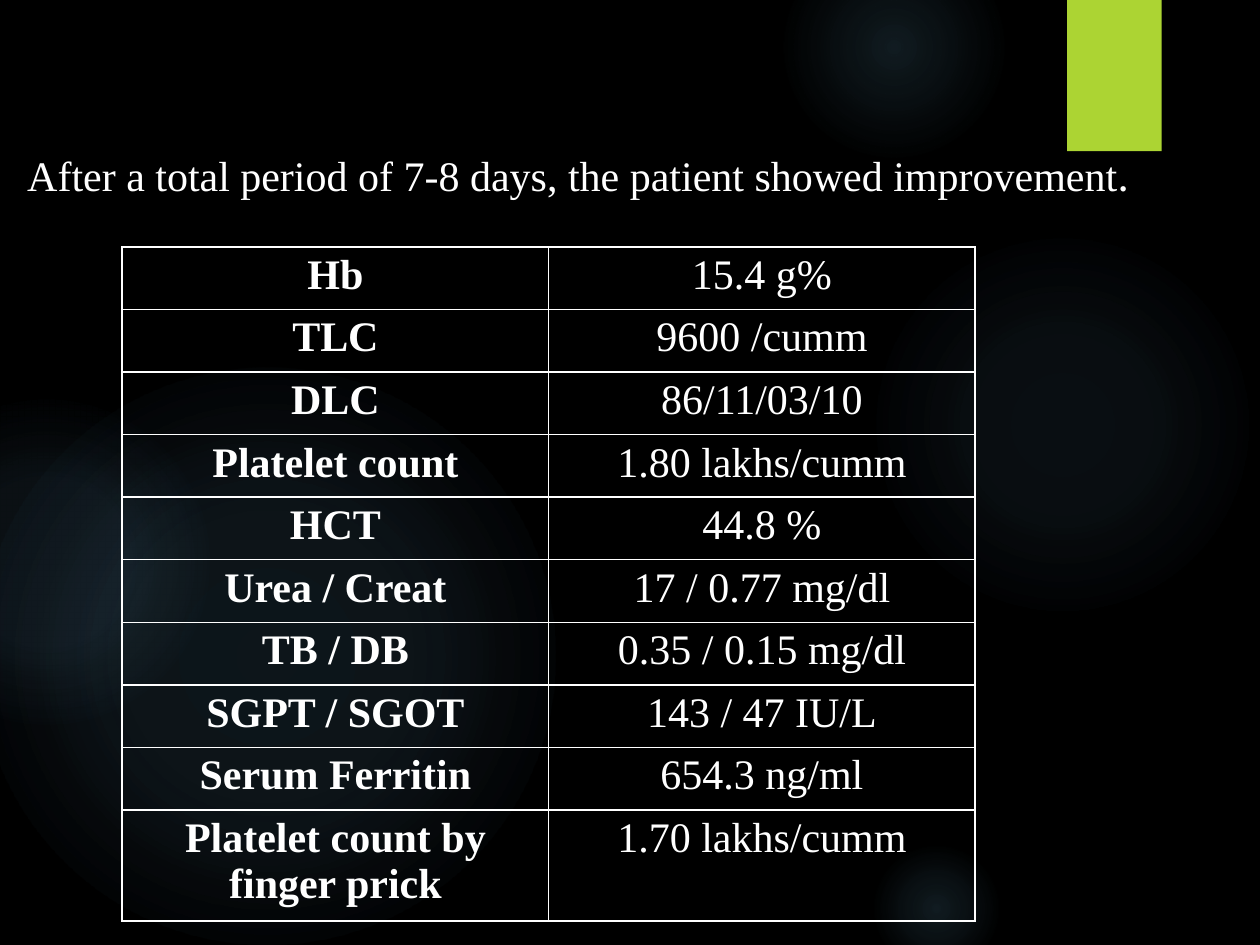
from dataclasses import dataclass

from lxml.etree import SubElement
from pptx import Presentation
from pptx.dml.color import RGBColor
from pptx.enum.shapes import MSO_SHAPE
from pptx.enum.text import PP_ALIGN
from pptx.oxml import parse_xml
from pptx.oxml.ns import nsdecls, qn
from pptx.util import Inches, Pt


@dataclass(frozen=True)
class Theme:
    background: str = "000000"
    text: str = "FFFFFF"
    glow: str = "7AC4F0"
    accent: str = "ACD433"
    font: str = "Times New Roman"
    stop_font: str = "League Spartan"
    size: int = 24
    border: int = 1


theme = Theme()


def style(p, bold):
    p.alignment = PP_ALIGN.CENTER
    p.font.name = theme.font
    p.font.size = Pt(theme.size)
    p.font.bold = bold
    p.font.color.rgb = RGBColor.from_string(theme.text)


def glow_fill(stops):
    gs = "".join(
        f'<a:gs pos="{pos * 1000}"><a:srgbClr val="{theme.glow}">'
        f'<a:alpha val="{alpha * 1000}"/></a:srgbClr></a:gs>'
        for pos, alpha in stops
    )
    return parse_xml(
        f'<a:gradFill {nsdecls("a")} rotWithShape="1"><a:gsLst>{gs}</a:gsLst>'
        '<a:path path="circle"><a:fillToRect l="50000" t="50000" r="50000" b="50000"/>'
        "</a:path></a:gradFill>"
    )


prs = Presentation()
prs.slide_width, prs.slide_height = Inches(10), Inches(7.5)
s = prs.slides.add_slide(prs.slide_layouts[1])
s.background.fill.solid()
s.background.fill.fore_color.rgb = RGBColor.from_string(theme.background)
title, body = s.placeholders
title.element.getparent().remove(title.element)

glows = [
    (6.89, 1.83, 3.08, 7, 6, 69),
    (6.22, -0.5, 1.75, 14, 7, 73),
    (6.89, 6.67, 1.08, 14, 7, 66),
    (-0.17, 2.92, 4.58, 11, 10, 75),
    (-0.92, 3.17, 2.58, 8, 8, 72),
]
for left, top, size, inner, middle, edge in glows:
    sp = s.shapes.add_shape(
        MSO_SHAPE.OVAL, Inches(left), Inches(top), Inches(size), Inches(size)
    )
    sp.shadow.inherit = False
    sp.line.fill.background()
    geometry = sp.element.spPr.find(qn("a:prstGeom"))
    geometry.addnext(glow_fill([(0, inner), (36, middle), (edge, 0)]))

tab = s.shapes.add_shape(
    MSO_SHAPE.RECTANGLE, Inches(8.47), Inches(0), Inches(0.75), Inches(1.2)
)
tab.shadow.inherit = False
tab.fill.solid()
tab.fill.fore_color.rgb = RGBColor.from_string(theme.accent)
tab.line.fill.background()

s.shapes.element.append(body.element)
body.left, body.top = Inches(0), Inches(1.14)
body.width, body.height = Inches(9.19), Inches(6.17)
p = body.text_frame.paragraphs[0]
style(p, False)
p.space_before = Pt(10)
pPr = p._p.get_or_add_pPr()
pPr.set("marL", "0")
pPr.set("indent", "0")
pPr.find(qn("a:spcBef")).addnext(parse_xml(f'<a:buNone {nsdecls("a")}/>'))
p.add_run().text = "After a total period of 7-8 days, the patient showed improvement"
r = p.add_run()
r.text = "."
r.font.name = theme.stop_font

results = [
    ("Hb", "15.4 g%"),
    ("TLC", "9600 /cumm"),
    ("DLC", "86/11/03/10"),
    ("Platelet count", "1.80 lakhs/cumm"),
    ("HCT", "44.8 %"),
    ("Urea / Creat", "17 / 0.77 mg/dl"),
    ("TB / DB", "0.35 / 0.15 mg/dl"),
    ("SGPT / SGOT", "143 / 47 IU/L"),
    ("Serum Ferritin", "654.3 ng/ml"),
    ("Platelet count by finger prick", "1.70 lakhs/cumm"),
]
last_height = Inches(0.88)
row_height = (Inches(5.35) - last_height) // (len(results) - 1)
table = s.shapes.add_table(
    len(results), 2, Inches(0.97), Inches(1.96), Inches(6.77), Inches(5.35)
).table
table.first_row = table.horz_banding = False
for row in table.rows:
    row.height = row_height
table.rows[len(results) - 1].height = last_height

for i, result in enumerate(results):
    for j, text in enumerate(result):
        cell = table.cell(i, j)
        cell.margin_left = cell.margin_right = Inches(0.07)
        cell.margin_top = cell.margin_bottom = Inches(0.04)
        cell.text = text
        style(cell.text_frame.paragraphs[0], j == 0)
        tcPr = cell._tc.get_or_add_tcPr()
        for side in ("lnL", "lnR", "lnT", "lnB"):
            ln = SubElement(tcPr, qn(f"a:{side}"), w=str(Pt(theme.border)))
            fill = SubElement(ln, qn("a:solidFill"))
            SubElement(fill, qn("a:srgbClr"), val=theme.text)
        cell.fill.background()

prs.save("out.pptx")
